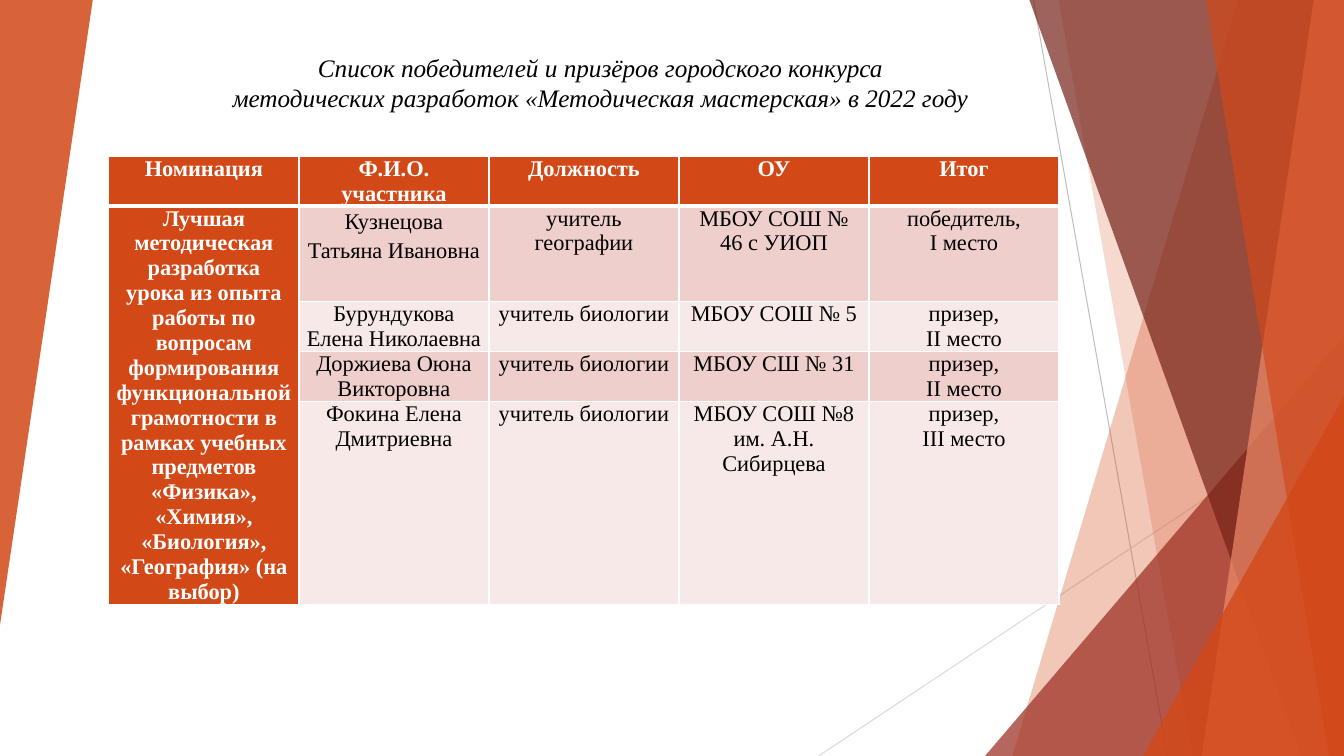
from pptx import Presentation
from pptx.dml.color import RGBColor
from pptx.enum.shapes import MSO_CONNECTOR, MSO_SHAPE
from pptx.enum.text import MSO_ANCHOR, PP_ALIGN
from pptx.oxml.ns import qn
from pptx.util import Inches, Pt
from lxml import etree

STRAIGHT = MSO_CONNECTOR.STRAIGHT
TRIANGLE = MSO_SHAPE.ISOSCELES_TRIANGLE
CENTER, TOP, MIDDLE = PP_ALIGN.CENTER, MSO_ANCHOR.TOP, MSO_ANCHOR.MIDDLE

# Content
FONT = "Times New Roman"
ORANGE, WHITE, BLACK = "D34817", "FFFFFF", "000000"
BANDS = ["EFCFCC", "F7E9E8"]
TITLE = [
    "Список победителей и призёров городского конкурса",
    "методических разработок «Методическая мастерская» в 2022 году",
]
HEADINGS = ["Номинация", "Ф.И.О. участника", "Должность", "ОУ", "Итог"]
NOMINATION = (
    "Лучшая методическая разработка урока из опыта работы по вопросам "
    "формирования функциональной грамотности в рамках учебных предметов "
    "«Физика», «Химия», «Биология», «География» (на выбор)"
)
WINNERS = [
    ["Кузнецова Татьяна Ивановна", "учитель географии", "МБОУ СОШ № 46 с УИОП", "победитель,\nI место"],
    ["Бурундукова Елена Николаевна", "учитель биологии", "МБОУ СОШ № 5", "призер,\nII место"],
    ["Доржиева Оюна Викторовна", "учитель биологии", "МБОУ СШ № 31", "призер,\nII место"],
    ["Фокина Елена Дмитриевна", "учитель биологии", "МБОУ СОШ №8 им. А.Н. Сибирцева", "призер,\nIII место"],
]
COLUMN_WIDTH = 1.885
ROW_HEIGHTS = [0.49, 0.95, 0.49, 0.49, 2.0]

# Backdrop: rays are (start, end, colour)
RAYS = [
    ((10.25, 0), (11.58, 7.5), "BFBFBF"),
    ((13.33, 4.03), (8.12, 7.5), "D9D9D9"),
]
# Bands reach the right edge: (left at top, left at bottom, colour, opacity %)
# Wedges are triangles: (left, top, width, height, rotation, colour, opacity %)
FACETS = [
    (12.28, 10.04, ORANGE, 30),
    (10.5, 11.83, ORANGE, 20),
    (9.77, 3.33, 3.56, 4.17, 0, "9B2D1F", 72),
    (10.21, 12.91, "742217", 70),
    (13.03, 11.92, "EF8C6A", 70),
    (11.96, 13.18, ORANGE, 65),
    (11.34, 3.93, 1.99, 3.57, 0, ORANGE, 80),
    (0, 0, 0.92, 6.2, 180, ORANGE, 85),
]
SLIDE_W, SLIDE_H = 13.33, 7.5


def rgb(value):
    return RGBColor.from_string(value)


def paint(shape, color, opacity):
    shape.shadow.inherit = False
    shape.line.fill.background()
    shape.fill.solid()
    shape.fill.fore_color.rgb = rgb(color)
    tint = shape.fill._xPr.find(qn("a:solidFill"))[0]
    etree.SubElement(tint, qn("a:alpha"), val=str(opacity * 1000))


def write(frame, lines, size, color, bold=False, italic=False):
    for i, line in enumerate(lines):
        paragraph = frame.paragraphs[0] if i == 0 else frame.add_paragraph()
        paragraph.alignment = CENTER
        run = paragraph.add_run()
        run.text = line
        run.font.name, run.font.size = FONT, Pt(size)
        run.font.bold, run.font.italic = bold, italic
        run.font.color.rgb = rgb(color)


def add_borders(cell, widths):
    properties = cell._tc.get_or_add_tcPr()
    for side, width in zip("LRTB", widths):
        border = etree.SubElement(properties, qn("a:ln" + side), w=str(Pt(width)))
        fill = etree.SubElement(border, qn("a:solidFill"))
        etree.SubElement(fill, qn("a:srgbClr"), val=WHITE)


prs = Presentation()
prs.slide_width, prs.slide_height = Inches(SLIDE_W), Inches(SLIDE_H)
slide = prs.slides.add_slide(prs.slide_layouts[6])
shapes = slide.shapes

# Rays
for start, end, color in RAYS:
    ray = shapes.add_connector(STRAIGHT, *map(Inches, start + end))
    ray.line.color.rgb = rgb(color)
    ray.line.width = Pt(0.75)
    etree.SubElement(ray._element.spPr, qn("a:effectLst"))

# Bands and wedges, back to front
for *place, color, opacity in FACETS:
    if len(place) == 2:
        top_left, bottom_left = place
        outline = shapes.build_freeform(Inches(top_left), 0)
        corners = [(SLIDE_W, 0), (SLIDE_W, SLIDE_H), (bottom_left, SLIDE_H)]
        outline.add_line_segments([(Inches(x), Inches(y)) for x, y in corners])
        facet = outline.convert_to_shape()
    else:
        *box, rotation = place
        facet = shapes.add_shape(TRIANGLE, *map(Inches, box))
        facet.adjustments[0] = 1
        facet.rotation = rotation
    paint(facet, color, opacity)

# Table of winners
rows = [HEADINGS] + [[NOMINATION if i == 0 else ""] + winner for i, winner in enumerate(WINNERS)]
table = shapes.add_table(
    len(rows), len(HEADINGS), Inches(1.08), Inches(1.55),
    Inches(COLUMN_WIDTH * len(HEADINGS)), Inches(sum(ROW_HEIGHTS)),
).table
for column in table.columns:
    column.width = Inches(COLUMN_WIDTH)
for row, height in zip(table.rows, ROW_HEIGHTS):
    row.height = Inches(height)
table.cell(1, 0).merge(table.cell(len(WINNERS), 0))

for r, row in enumerate(rows):
    for c, text in enumerate(row):
        cell = table.cell(r, c)
        heading = r == 0 or c == 0
        cell.margin_left = cell.margin_right = Inches(0.07)
        cell.margin_top = cell.margin_bottom = 0
        cell.vertical_anchor = MIDDLE if r and c == 0 else TOP
        add_borders(cell, [1, 1, 3 if r == 1 else 1, 3 if r == 0 else 1])
        cell.fill.solid()
        cell.fill.fore_color.rgb = rgb(ORANGE if heading else BANDS[(r - 1) % 2])
        if text:
            write(cell.text_frame, text.split("\n"), 16, WHITE if heading else BLACK, bold=heading)
first_winner = table.cell(1, 1).text_frame.paragraphs[0]
first_winner.line_spacing = 1.15
first_winner.space_after = Pt(10)

# Title
title = shapes.add_textbox(Inches(0.07), Inches(0.47), Inches(11.28), Inches(1.01)).text_frame
title.word_wrap = True
title.vertical_anchor = TOP
write(title, TITLE, 18, BLACK, italic=True)
for paragraph in title.paragraphs:
    paragraph._p.get_or_add_pPr().set("indent", str(Inches(0.49)))

prs.save("out.pptx")
